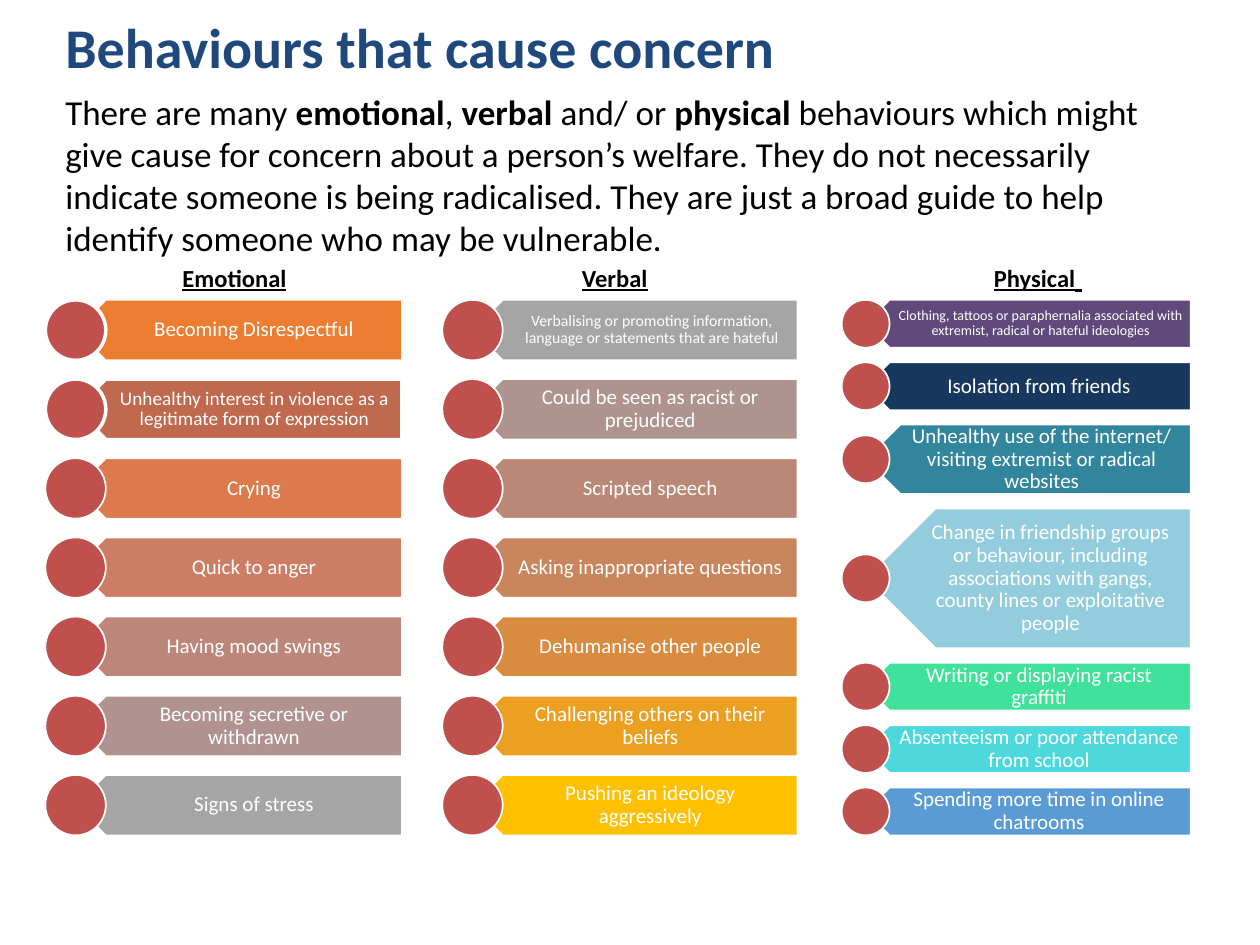
from pptx import Presentation
from pptx.dml.color import RGBColor
from pptx.enum.shapes import MSO_SHAPE
from pptx.enum.text import MSO_ANCHOR, PP_ALIGN
from pptx.util import Inches, Pt

FONT = "Calibri"
NAVY = RGBColor(0x1F, 0x49, 0x7D)
BLACK = RGBColor(0, 0, 0)
WHITE = RGBColor(255, 255, 255)
RED = RGBColor(0xC0, 0x50, 0x4D)
ORANGE = RGBColor(0xED, 0x7D, 0x31)
RUST = RGBColor(0xBF, 0x6A, 0x4F)
TERRACOTTA = RGBColor(0xDC, 0x7A, 0x4B)
CORAL = RGBColor(0xCC, 0x7D, 0x64)
ROSE = RGBColor(0xBD, 0x86, 0x7B)
MAUVE = RGBColor(0xB0, 0x93, 0x91)
GREY = RGBColor(0xA5, 0xA5, 0xA5)
TAUPE = RGBColor(0xAF, 0x93, 0x8F)
CLAY = RGBColor(0xBB, 0x88, 0x77)
COPPER = RGBColor(0xC9, 0x85, 0x5C)
OCHRE = RGBColor(0xD9, 0x8B, 0x3F)
AMBER = RGBColor(0xEB, 0xA0, 0x21)
GOLD = RGBColor(0xFF, 0xC0, 0x00)
PURPLE = RGBColor(0x60, 0x4A, 0x7B)
MIDNIGHT = RGBColor(0x17, 0x37, 0x5E)
TEAL = RGBColor(0x31, 0x85, 0x9C)
SKY = RGBColor(0x93, 0xCD, 0xDD)
GREEN = RGBColor(0x3F, 0xE1, 0x9B)
AQUA = RGBColor(0x4D, 0xD8, 0xDB)
BLUE = RGBColor(0x5B, 0x9B, 0xD5)

COLUMN_TOP, COLUMN_HEIGHT = 2.38, 4.25

# Each item: text, fill, then any of size, height, bar_line and disc_line.
EMOTIONAL = [
    ("Becoming Disrespectful", ORANGE, dict(disc_line=2)),
    ("Unhealthy interest in violence as a legitimate form of expression", RUST,
     dict(size=11, bar_line=2, disc_line=2)),
    ("Crying", TERRACOTTA, {}),
    ("Quick to anger", CORAL, {}),
    ("Having mood swings", ROSE, {}),
    ("Becoming secretive or withdrawn", MAUVE, {}),
    ("Signs of stress", GREY, {}),
]
VERBAL = [
    ("Verbalising or promoting information, language or statements that are hateful",
     GREY, dict(size=9)),
    ("Could be seen as racist or prejudiced", TAUPE, {}),
    ("Scripted speech", CLAY, {}),
    ("Asking inappropriate questions", COPPER, {}),
    ("Dehumanise other people", OCHRE, {}),
    ("Challenging others on their beliefs", AMBER, {}),
    ("Pushing an ideology aggressively", GOLD, {}),
]
PHYSICAL = [
    ("Clothing, tattoos or paraphernalia associated with extremist, radical or "
     "hateful ideologies", PURPLE, dict(size=8)),
    ("Isolation from friends", MIDNIGHT, {}),
    ("Unhealthy use of the internet/ visiting extremist or radical websites", TEAL,
     dict(height=0.55)),
    ("Change in friendship groups or behaviour, including associations with gangs, "
     "county lines or exploitative people", SKY, dict(height=1.11)),
    ("Writing or displaying racist graffiti", GREEN, {}),
    ("Absenteeism or poor attendance from school", AQUA, {}),
    ("Spending more time in online chatrooms", BLUE, {}),
]


def add_text(p, text, size=12, color=BLACK, bold=False, underline=False):
    r = p.add_run()
    r.text = text
    r.font.name = FONT
    r.font.size = Pt(size)
    r.font.color.rgb = color
    r.font.bold = bold
    r.font.underline = underline


def add_box(slide, left, top, width, height, anchor=MSO_ANCHOR.TOP):
    """Add a wrapping text box and return its first paragraph."""
    tf = slide.shapes.add_textbox(
        Inches(left), Inches(top), Inches(width), Inches(height)).text_frame
    tf.word_wrap = True
    tf.vertical_anchor = anchor
    return tf.paragraphs[0]


def paint(sp, fill, line):
    sp.shadow.inherit = False
    sp.fill.solid()
    sp.fill.fore_color.rgb = fill
    sp.line.color.rgb = WHITE
    sp.line.width = Pt(line)


def add_intro(slide, left, top, width, height):
    p = add_box(slide, left, top, width, height)
    parts = [
        ("There are many ", False), ("emotional", True), (", ", False),
        ("verbal", True), (" and/ or ", False), ("physical", True),
        (" behaviours which might give cause for concern about a person’s welfare. "
         "They do not necessarily indicate someone is being radicalised. They are just "
         "a broad guide to help identify someone who may be vulnerable.", False),
    ]
    for text, bold in parts:
        add_text(p, text, size=20, bold=bold)


def add_behaviour(slide, left, top, width, height, disc, text, fill,
                  size=12, bar_line=1, disc_line=1):
    """Add a bar pointing left, with a disc centred on its tip."""
    tip, right = left + disc / 2, left + width
    shoulder, middle, bottom = tip + height / 2, top + height / 2, top + height
    builder = slide.shapes.build_freeform(Inches(right), Inches(bottom))
    outline = [(shoulder, bottom), (tip, middle), (shoulder, top), (right, top)]
    builder.add_line_segments([(Inches(x), Inches(y)) for x, y in outline], close=True)
    bar = builder.convert_to_shape()
    paint(bar, fill, bar_line)

    tf = bar.text_frame
    tf.word_wrap = True
    tf.vertical_anchor = MSO_ANCHOR.MIDDLE
    tf.margin_left = Inches(height / 4 + disc * 0.44)
    tf.margin_right = Inches(size * 0.0075)
    tf.margin_top = tf.margin_bottom = Inches(size * 0.004)
    p = tf.paragraphs[0]
    p.alignment = PP_ALIGN.CENTER
    p.line_spacing = 0.9
    add_text(p, text, size=size, color=WHITE)

    sp = slide.shapes.add_shape(
        MSO_SHAPE.OVAL, Inches(left), Inches(middle - disc / 2),
        Inches(disc), Inches(disc))
    paint(sp, RED, disc_line)


def add_column(slide, left, top, width, height, disc, items):
    """Stack the items with equal gaps; a bar is as tall as its disc by default."""
    heights = [opts.get("height", disc) for _, _, opts in items]
    gap = (height - sum(heights)) / (len(items) - 1)
    for (text, fill, opts), bar_height in zip(items, heights):
        style = {key: value for key, value in opts.items() if key != "height"}
        add_behaviour(slide, left, top, width, bar_height, disc, text, fill, **style)
        top += bar_height + gap


def add_heading(slide, left, top, width, height, text, underline_end=False):
    p = add_box(slide, left, top, width, height)
    add_text(p, text, size=14, bold=True, underline=True)
    add_text(p, " ", size=18, bold=True, underline=underline_end)


def main():
    prs = Presentation()
    prs.slide_width, prs.slide_height = Inches(10), Inches(7.5)
    slide = prs.slides.add_slide(prs.slide_layouts[6])

    title = add_box(slide, 0.42, 0.07, 8.85, 0.59, MSO_ANCHOR.MIDDLE)
    add_text(title, "Behaviours that cause concern", size=32, color=NAVY, bold=True)
    add_intro(slide, 0.42, 0.67, 9, 4.9)

    columns = [(0.36, 2.83, 0.48, EMOTIONAL),
               (3.51, 2.82, 0.48, VERBAL),
               (6.68, 2.77, 0.38, PHYSICAL)]
    for left, width, disc, items in columns:
        add_column(slide, left, COLUMN_TOP, width, COLUMN_HEIGHT, disc, items)

    add_heading(slide, 1.35, 1.98, 2.36, 0.4, "Emotional")
    add_heading(slide, 4.52, 1.98, 2.36, 0.4, "Verbal")
    add_heading(slide, 7.79, 1.98, 1.63, 0.4, "Physical", underline_end=True)
    prs.save("out.pptx")


if __name__ == "__main__":
    main()
